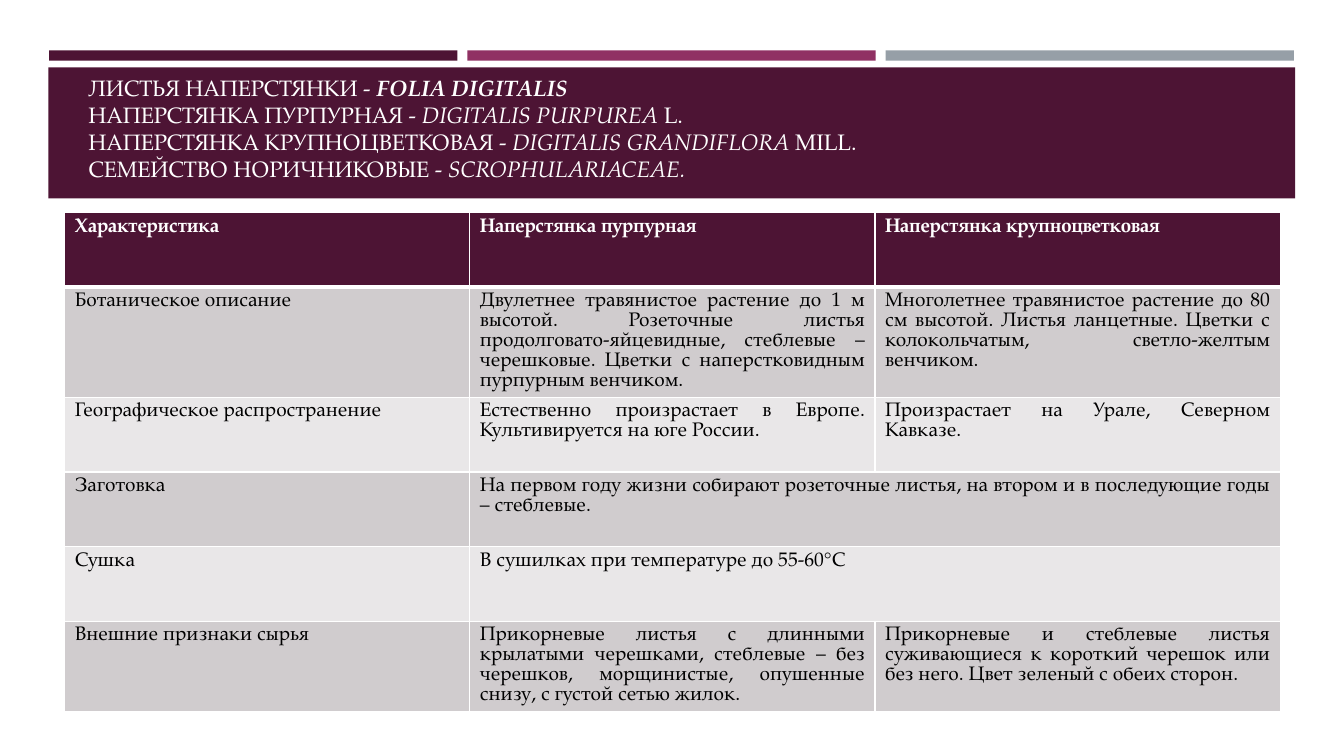
from dataclasses import dataclass

from lxml import etree
from pptx import Presentation
from pptx.dml.color import RGBColor
from pptx.enum import shapes, text
from pptx.oxml import ns
from pptx.util import Cm, Pt

PLUM = RGBColor(0x4D, 0x14, 0x34)
BERRY = RGBColor(0x90, 0x31, 0x63)
STEEL = RGBColor(0x96, 0x9F, 0xA7)
WHITE = RGBColor(0xFF, 0xFF, 0xFF)
BLACK = RGBColor(0, 0, 0)
DARK_BAND = RGBColor(0xD0, 0xCC, 0xCE)
LIGHT_BAND = RGBColor(0xE9, 0xE7, 0xE8)
FONT = "TeX Gyre Pagella"


@dataclass
class Block:
    left: float
    top: float
    width: float
    height: float
    color: RGBColor


@dataclass
class TitleLine:
    russian: str
    latin: str
    author: str = ""
    bold: bool = False


BLOCKS = [
    Block(1.24 + 10.54 * i, 1.27, 10.29, 0.26, color)
    for i, color in enumerate((PLUM, BERRY, STEEL))
] + [Block(1.22, 1.7, 31.42, 3.3, PLUM)]

TITLE = [
    TitleLine("ЛИСТЬЯ НАПЕРСТЯНКИ - ", "FOLIA DIGITALIS", bold=True),
    TitleLine("НАПЕРСТЯНКА ПУРПУРНАЯ - ", "DIGITALIS PURPUREA ", "L."),
    TitleLine("НАПЕРСТЯНКА КРУПНОЦВЕТКОВАЯ - ", "DIGITALIS GRANDIFLORA ", "MILL."),
    TitleLine("СЕМЕЙСТВО НОРИЧНИКОВЫЕ - ", "SCROPHULARIACEAE."),
]

# A row with two entries spreads the second one over both plant columns.
ROWS = [
    ("Характеристика", "Наперстянка пурпурная", "Наперстянка крупноцветковая"),
    ("Ботаническое описание",
     "Двулетнее травянистое растение до 1 м высотой. Розеточные листья "
     "продолговато-яйцевидные, стеблевые – черешковые. Цветки с "
     "наперстковидным пурпурным венчиком.",
     "Многолетнее травянистое растение до 80 см высотой. Листья ланцетные. "
     "Цветки с колокольчатым, светло-желтым венчиком."),
    ("Географическое распространение",
     "Естественно произрастает в Европе. Культивируется на юге России.",
     "Произрастает на Урале, Северном Кавказе."),
    ("Заготовка",
     "На первом году жизни собирают розеточные листья, на втором и в "
     "последующие годы – стеблевые."),
    ("Сушка", "В сушилках при температуре до 55-60°С"),
    ("Внешние признаки сырья",
     "Прикорневые листья с длинными крылатыми черешками, стеблевые – без "
     "черешков, морщинистые, опушенные снизу, с густой сетью жилок.",
     "Прикорневые и стеблевые листья суживающиеся к короткий черешок или "
     "без него. Цвет зеленый с обеих сторон."),
]


def add_text(paragraph, words: str, *, size: float, color: RGBColor,
             bold: bool = False, italic: bool = False) -> None:
    run = paragraph.add_run()
    run.text = words
    font = run.font
    font.name, font.size = FONT, Pt(size)
    font.bold, font.italic = bold, italic
    font.color.rgb = color


def draw_block(slide, block: Block) -> None:
    bar = slide.shapes.add_shape(
        shapes.MSO_SHAPE.RECTANGLE, Cm(block.left), Cm(block.top),
        Cm(block.width), Cm(block.height))
    bar.shadow.inherit = False
    bar.fill.solid()
    bar.fill.fore_color.rgb = block.color
    bar.line.fill.background()


def draw_title(slide, lines: list[TitleLine]) -> None:
    frame = slide.shapes.add_textbox(Cm(1.98), Cm(2.18), Cm(30.63), Cm(3.18)).text_frame
    frame.word_wrap = True
    frame.auto_size = text.MSO_AUTO_SIZE.NONE
    frame.vertical_anchor = text.MSO_ANCHOR.BOTTOM
    frame.margin_bottom = Cm(0.77)
    for i, line in enumerate(lines):
        paragraph = frame.add_paragraph() if i else frame.paragraphs[0]
        paragraph.line_spacing = Pt(19.3)
        add_text(paragraph, line.russian, size=16, color=WHITE)
        add_text(paragraph, line.latin, size=16, color=WHITE, bold=line.bold, italic=True)
        if line.author:
            add_text(paragraph, line.author, size=16, color=WHITE)


def set_borders(cell, top: float, bottom: float) -> None:
    """Give the cell white edges; top and bottom are widths in points."""
    properties = cell._tc.get_or_add_tcPr()
    for side, width in (("L", 1), ("R", 1), ("T", top), ("B", bottom)):
        edge = etree.SubElement(properties, ns.qn(f"a:ln{side}"), w=str(Pt(width)))
        fill = etree.SubElement(edge, ns.qn("a:solidFill"))
        etree.SubElement(fill, ns.qn("a:srgbClr"), val=str(WHITE))


def draw_comparison(slide, rows: list[tuple[str, ...]]) -> None:
    columns, row_height = 3, 1.88
    table = slide.shapes.add_table(
        len(rows), columns, Cm(1.63), Cm(5.36), Cm(30.63),
        Cm(row_height * len(rows))).table
    for r, entries in enumerate(rows):
        header = r == 0
        band = PLUM if header else DARK_BAND if r % 2 else LIGHT_BAND
        for c in range(columns):
            cell = table.cell(r, c)
            set_borders(cell, top=3 if r == 1 else 1, bottom=3 if header else 1)
            cell.fill.solid()
            cell.fill.fore_color.rgb = band
        if len(entries) < columns:
            table.cell(r, 1).merge(table.cell(r, 2))
        for c, entry in enumerate(entries):
            paragraph = table.cell(r, c).text_frame.paragraphs[0]
            paragraph.line_spacing = Pt(14.3)
            if c and not header:
                paragraph.alignment = text.PP_ALIGN.JUSTIFY
            add_text(paragraph, entry, size=14, bold=header,
                     color=WHITE if header else BLACK)


def main() -> None:
    deck = Presentation()
    deck.slide_width, deck.slide_height = Cm(33.87), Cm(19.05)
    slide = deck.slides.add_slide(deck.slide_layouts[6])
    for block in BLOCKS:
        draw_block(slide, block)
    draw_title(slide, TITLE)
    draw_comparison(slide, ROWS)
    deck.save("out.pptx")


if __name__ == "__main__":
    main()
